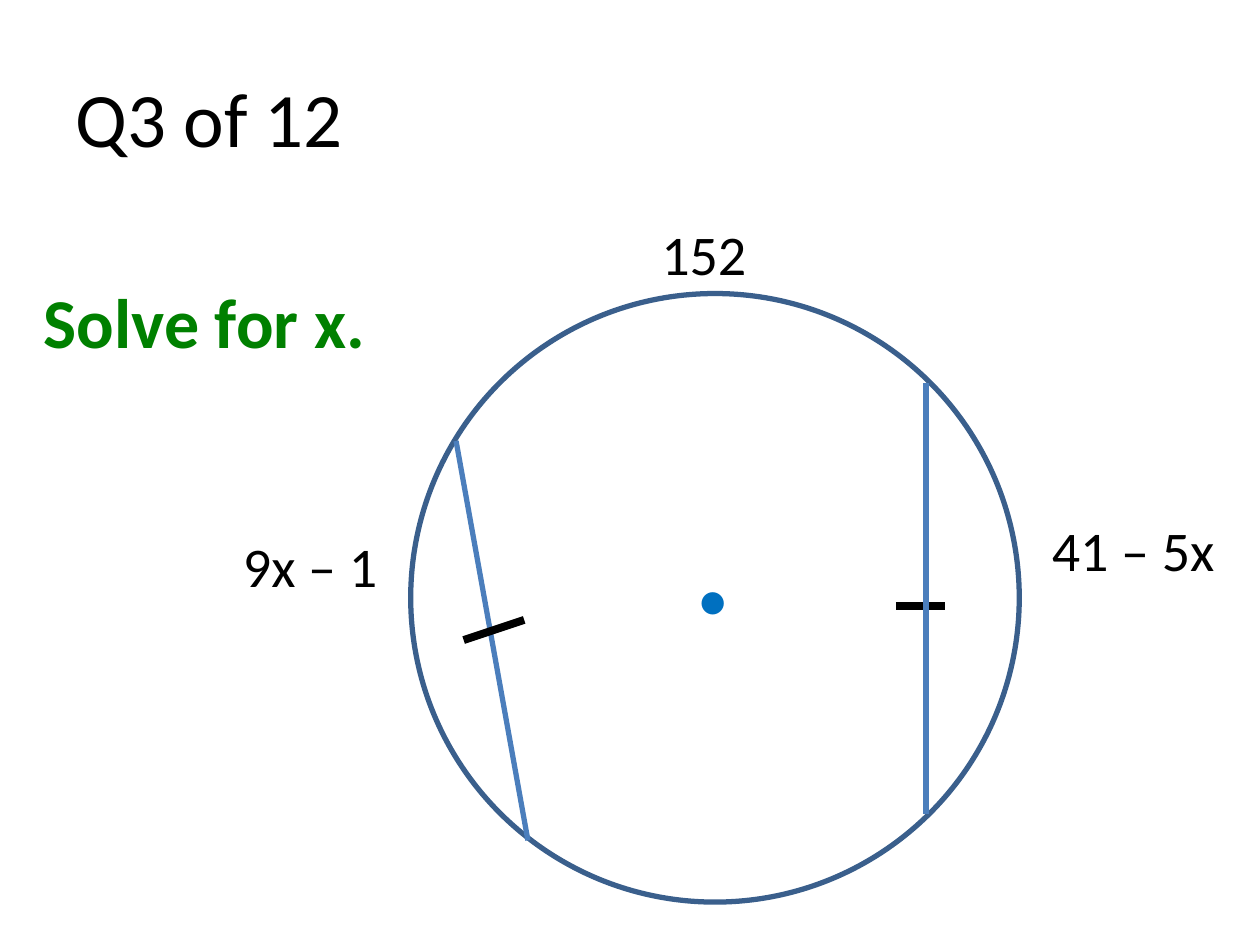
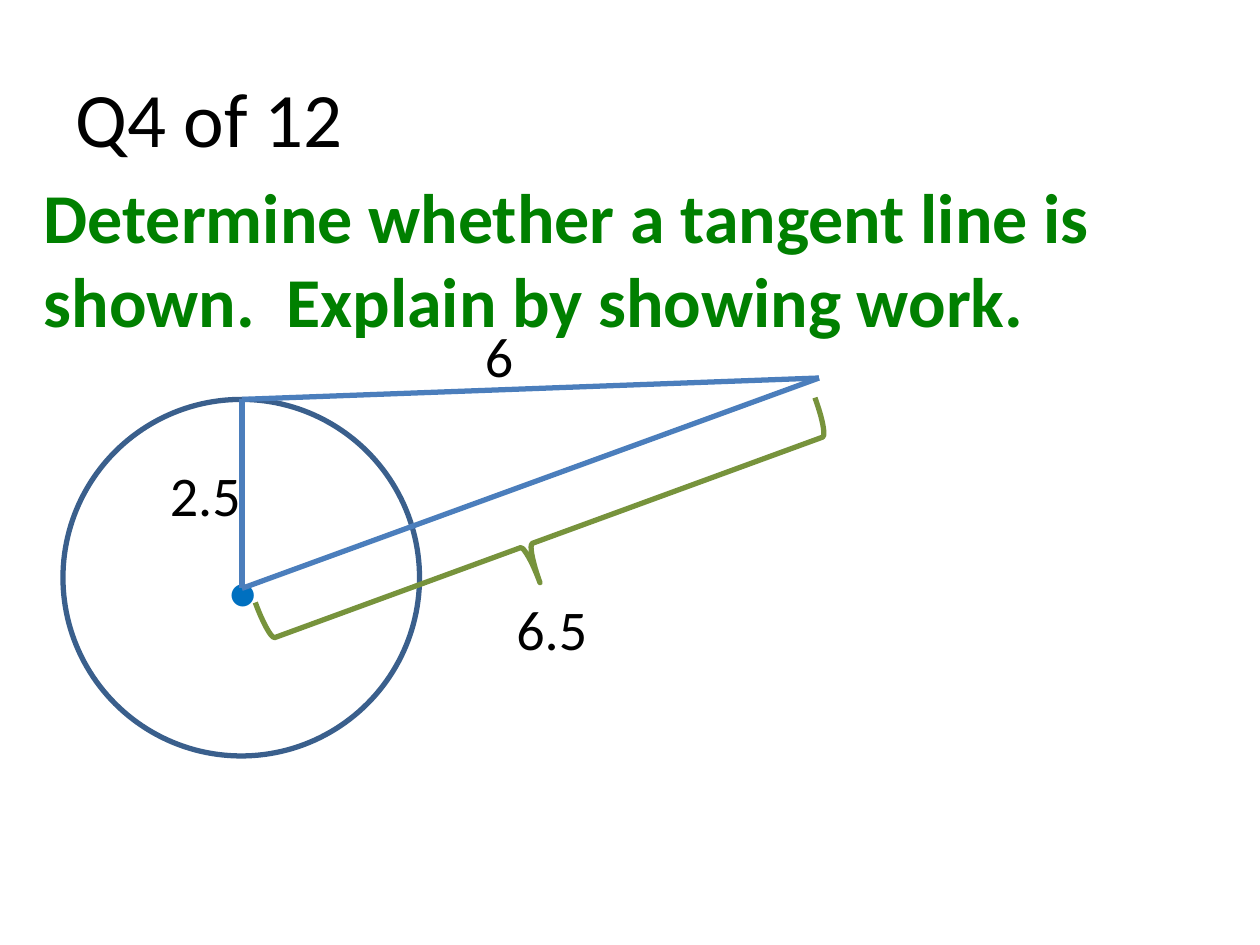
from pptx import Presentation
from pptx.dml.color import RGBColor
from pptx.enum.shapes import MSO_CONNECTOR, MSO_SHAPE
from pptx.enum.text import MSO_ANCHOR, MSO_AUTO_SIZE
from pptx.oxml.ns import qn
from pptx.util import Inches, Pt
from lxml.etree import SubElement

# Shared look
FONT = "Calibri"
BLACK, GREEN = "000000", "008000"
CIRCLE_BLUE, CHORD_BLUE, DOT_BLUE = "3A5F8C", "4B7EBC", "0070C0"
BRACE_GREEN = "77933C"

# The slide is a grid of 100 columns by 75 rows of square cells
SLIDE_WIDTH, SLIDE_HEIGHT = Inches(10), Inches(7.5)
CELL = SLIDE_WIDTH / 100
LABEL_HEIGHT = 6.4


def cells(*counts):
    return [round(count * CELL) for count in counts]


def color(hex_code):
    return RGBColor.from_string(hex_code)


def add_text(page, text, area, size, hex_code=BLACK, bold=False, middle=False, wrap=True):
    box = page.shapes.add_textbox(*cells(*area))
    frame = box.text_frame
    frame.word_wrap = wrap
    frame.auto_size = MSO_AUTO_SIZE.NONE
    frame.vertical_anchor = MSO_ANCHOR.MIDDLE if middle else MSO_ANCHOR.TOP
    para = frame.paragraphs[0]
    para.text = text
    para.font.name = FONT
    para.font.size = Pt(size)
    para.font.bold = bold
    para.font.color.rgb = color(hex_code)


def add_label(page, text, left, top, width):
    add_text(page, text, (left, top, width, LABEL_HEIGHT), 32)


def add_center_dot(page, left, top):
    add_text(page, "•", (left, top, 4.3, 7.1), 36, DOT_BLUE, wrap=False)


def add_outline(page, kind, area, hex_code):
    shape = page.shapes.add_shape(kind, *cells(*area))
    shape.shadow.inherit = False
    shape.fill.background()
    shape.line.color.rgb = color(hex_code)
    shape.line.width = Pt(3)
    return shape


def add_circle(page, left, top, diameter):
    add_outline(page, MSO_SHAPE.OVAL, (left, top, diameter, diameter), CIRCLE_BLUE)


def add_line(page, start, end, hex_code=CHORD_BLUE, width=3):
    line = page.shapes.add_connector(MSO_CONNECTOR.STRAIGHT, *cells(*start, *end))
    line.line.color.rgb = color(hex_code)
    line.line.width = Pt(width)
    SubElement(line._element.spPr, qn("a:effectLst"))


def add_tick(page, start, end):
    add_line(page, start, end, BLACK, 4.5)


def add_question(deck, number, task, task_height):
    page = deck.slides.add_slide(deck.slide_layouts[6])
    add_text(page, f"Q{number} of 12", (5, 3, 90, 12.5), 44, middle=True)
    add_text(page, task, (2.5, 14.2, 93.3, task_height), 40, GREEN, bold=True, middle=True)
    return page


def add_chords_question(deck):
    page = add_question(deck, 3, "Solve for x.", 22.5)
    add_circle(page, 32.6, 23.3, 48.3)
    add_center_dot(page, 54.4, 43.8)

    # Congruent chords with their tick marks
    add_line(page, (41.9, 66.7), (36.2, 35))
    add_tick(page, (36.8, 50.8), (41.6, 49.2))
    add_tick(page, (71.1, 48.1), (75, 48.1))
    add_line(page, (73.5, 64.6), (73.5, 30.4))

    # Arc measures
    add_label(page, "9x – 1", 18.3, 41.7, 18.5)
    add_label(page, "41 – 5x", 82.5, 40.4, 17.6)
    add_label(page, "152", 51.5, 16.9, 14.4)


def add_tangent_question(deck):
    task = "Determine whether a tangent line is shown.  Explain by showing work."
    page = add_question(deck, 4, task, 12.5)
    add_circle(page, 5, 31.7, 28.3)
    add_center_dot(page, 17.1, 43.2)

    # Triangle of radius, possible tangent and hypotenuse
    center, touch, outside = (19.2, 46.7), (19.2, 31.7), (65, 30)
    for start, end in ((touch, center), (touch, outside), (center, outside)):
        add_line(page, start, end)

    # Side lengths
    for text, left, top in (("6.5", 40, 46.7), ("2.5", 12.5, 36.1), ("6", 37.5, 25)):
        add_label(page, text, left, top, 10.8)

    # Brace along the hypotenuse
    brace = add_outline(page, MSO_SHAPE.RIGHT_BRACE, (40.4, 19, 6.3, 47.3), BRACE_GREEN)
    brace.rotation = 69.9
    brace.adjustments[0] = 0.08
    brace.adjustments[1] = 0.54


def main():
    deck = Presentation()
    deck.slide_width, deck.slide_height = SLIDE_WIDTH, SLIDE_HEIGHT
    add_chords_question(deck)
    add_tangent_question(deck)
    deck.save("out.pptx")


if __name__ == "__main__":
    main()
